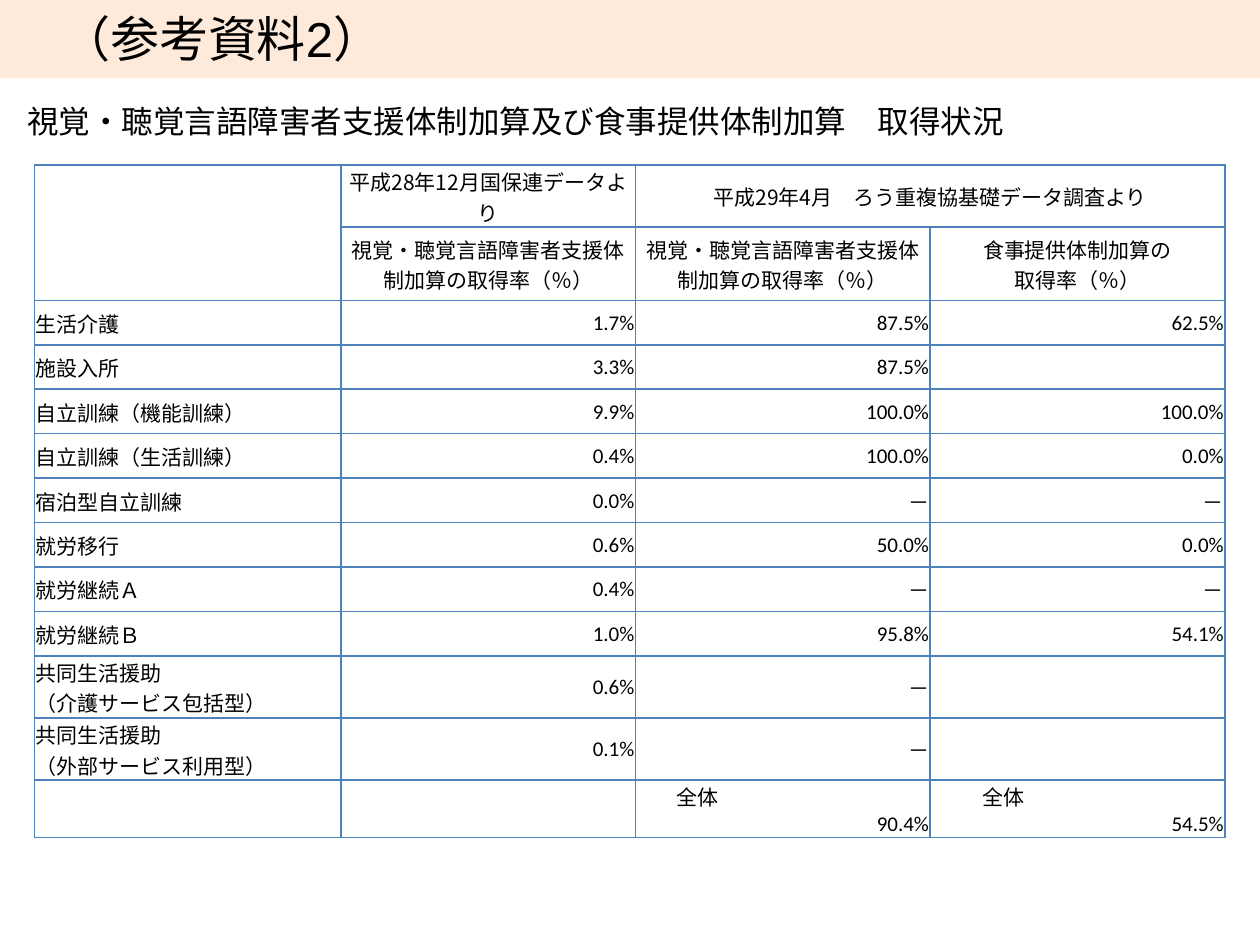
"""Build the slide on how many facilities receive the support and meal allowances."""
from typing import NamedTuple

from lxml import etree
from pptx import Presentation
from pptx.dml.color import RGBColor
from pptx.enum.shapes import MSO_SHAPE
from pptx.enum.text import MSO_ANCHOR, PP_ALIGN
from pptx.oxml.ns import qn
from pptx.util import Pt

RECTANGLE = MSO_SHAPE.RECTANGLE
TOP, MIDDLE = MSO_ANCHOR.TOP, MSO_ANCHOR.MIDDLE
LEFT, CENTER, RIGHT = PP_ALIGN.LEFT, PP_ALIGN.CENTER, PP_ALIGN.RIGHT
COLORS = {"text": "000000", "banner": "FDEADA", "panel": "FFFFFF", "border": "4F81BD"}
JAPANESE_FONT = "Noto Sans CJK JP"
COLUMN_WIDTHS = [175, 168.4, 168.4, 168.4]
ROW_HEIGHTS = [25.9, 41.8] + [25.4] * 8 + [29.5, 25.4, 25.4]
SUPPORT_RATE = "視覚・聴覚言語障害者支援体制加算の取得率（％）"


class Panel(NamedTuple):
    left: float
    top: float
    width: float
    height: float
    color: str
    text: str
    size: float
    anchor: MSO_ANCHOR
    spacing: float


class Service(NamedTuple):
    name: str
    national: str
    support: str
    meal: str


class Total(NamedTuple):
    column: int
    rate: str
    indent: float


PANELS = [
    Panel(0, 0, 720, 43.5, "banner", "　（参考資料2）", 28, MIDDLE, 0),
    Panel(8.6, 54.7, 702.7, 436.3, "panel",
          "視覚・聴覚言語障害者支援体制加算及び食事提供体制加算　取得状況", 18, TOP, 6),
]
HEADERS = [
    ["", "平成28年12月国保連データより", "平成29年4月　ろう重複協基礎データ調査より", ""],
    ["", SUPPORT_RATE, SUPPORT_RATE, "食事提供体制加算の\v取得率（％）"],
]
SERVICES = [
    Service("生活介護", "1.7%", "87.5%", "62.5%"),
    Service("施設入所", "3.3%", "87.5%", ""),
    Service("自立訓練（機能訓練）", "9.9%", "100.0%", "100.0%"),
    Service("自立訓練（生活訓練）", "0.4%", "100.0%", "0.0%"),
    Service("宿泊型自立訓練", "0.0%", "－", "－"),
    Service("就労移行", "0.6%", "50.0%", "0.0%"),
    Service("就労継続Ａ", "0.4%", "－", "－"),
    Service("就労継続Ｂ", "1.0%", "95.8%", "54.1%"),
    Service("共同生活援助\n（介護サービス包括型）", "0.6%", "－", ""),
    Service("共同生活援助\n（外部サービス利用型）", "0.1%", "－", ""),
]
TOTALS = [Total(2, "90.4%", 23), Total(3, "54.5%", 29)]


def rgb(name: str) -> RGBColor:
    return RGBColor.from_string(COLORS[name])


def format_text(text_frame, size: float, font_name: str, alignment: PP_ALIGN) -> None:
    for paragraph in text_frame.paragraphs:
        paragraph.alignment = alignment
        for run in paragraph.runs:
            run.font.size = Pt(size)
            run.font.name = font_name
            run.font.color.rgb = rgb("text")
            east_asian = etree.SubElement(run.font._element, qn("a:ea"))
            east_asian.set("typeface", JAPANESE_FONT)


def draw_panel(slide, panel: Panel) -> None:
    shape = slide.shapes.add_shape(
        RECTANGLE, Pt(panel.left), Pt(panel.top), Pt(panel.width), Pt(panel.height))
    shape.shadow.inherit = False
    shape.fill.solid()
    shape.fill.fore_color.rgb = rgb(panel.color)
    shape.line.color.rgb = rgb(panel.color)
    shape.line.width = Pt(2)
    text_frame = shape.text_frame
    text_frame.text = panel.text
    text_frame.word_wrap = True
    text_frame.vertical_anchor = panel.anchor
    format_text(text_frame, panel.size, "Arial", LEFT)
    for paragraph in text_frame.paragraphs:
        paragraph.space_before = paragraph.space_after = Pt(panel.spacing)


def add_borders(cell) -> None:
    properties = cell._tc.get_or_add_tcPr()
    for position, side in enumerate(("a:lnL", "a:lnR", "a:lnT", "a:lnB")):
        line = etree.Element(qn(side), w=str(Pt(1)))
        fill = etree.SubElement(line, qn("a:solidFill"))
        etree.SubElement(fill, qn("a:srgbClr"), val=COLORS["border"])
        properties.insert(position, line)


def fill_cell(cell, text: str, font_name: str, alignment: PP_ALIGN) -> None:
    cell.margin_left = cell.margin_right = cell.margin_top = Pt(0.7)
    cell.margin_bottom = Pt(0)
    cell.vertical_anchor = MIDDLE
    cell.fill.background()
    add_borders(cell)
    cell.text_frame.text = text
    format_text(cell.text_frame, 12, font_name, alignment)


def draw_total(table, total: Total) -> None:
    cell = table.cell(len(ROW_HEIGHTS) - 1, total.column)
    label = cell.text_frame.paragraphs[0]
    label.alignment = LEFT
    label._p.get_or_add_pPr().set("marL", str(Pt(total.indent)))


def draw_table(slide) -> None:
    table = slide.shapes.add_table(
        len(ROW_HEIGHTS), len(COLUMN_WIDTHS), Pt(19.8), Pt(94.3),
        Pt(sum(COLUMN_WIDTHS)), Pt(sum(ROW_HEIGHTS))).table
    table.first_row = table.horz_banding = False
    for column, width in zip(table.columns, COLUMN_WIDTHS):
        column.width = Pt(width)
    for row, height in zip(table.rows, ROW_HEIGHTS):
        row.height = Pt(height)
    total_texts = {total.column: f"全体\n{total.rate}" for total in TOTALS}
    total_row = [total_texts.get(column, "") for column in range(len(COLUMN_WIDTHS))]
    for row_index, texts in enumerate([*HEADERS, *SERVICES, total_row]):
        for column_index, text in enumerate(texts):
            cell = table.cell(row_index, column_index)
            if row_index < len(HEADERS):
                # header text keeps its in-paragraph line break
                fill_cell(cell, text, JAPANESE_FONT, CENTER)
            elif column_index == 0:
                fill_cell(cell, text, JAPANESE_FONT, LEFT)
            else:
                fill_cell(cell, text, "Calibri", RIGHT)
    for total in TOTALS:
        draw_total(table, total)
    table.cell(0, 0).merge(table.cell(1, 0))
    table.cell(0, 2).merge(table.cell(0, 3))


def main() -> None:
    presentation = Presentation()
    presentation.slide_width = Pt(720)
    presentation.slide_height = Pt(540)
    slide = presentation.slides.add_slide(presentation.slide_layouts[6])
    for panel in PANELS:
        draw_panel(slide, panel)
    draw_table(slide)
    presentation.save("out.pptx")


if __name__ == "__main__":
    main()
